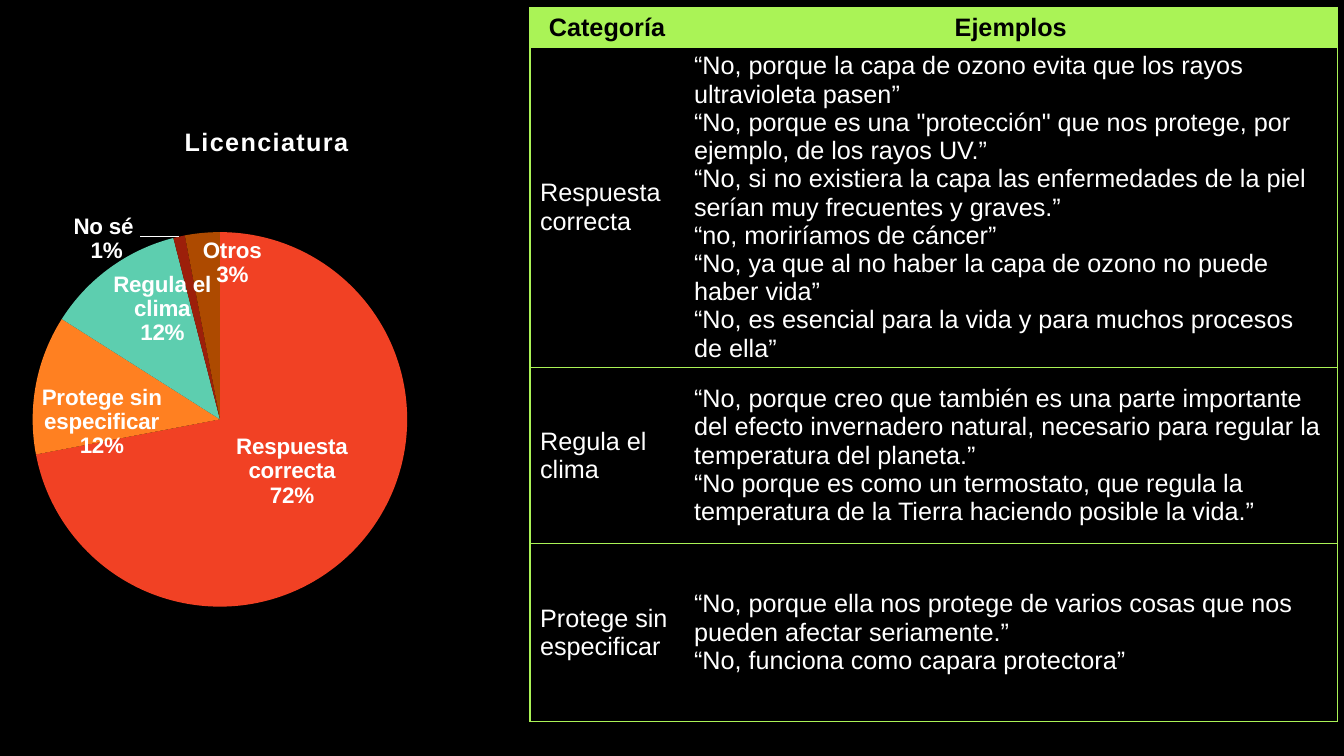
from copy import deepcopy

from lxml import etree
from pptx import Presentation
from pptx import util as u
from pptx.chart.data import CategoryChartData
from pptx.dml.color import RGBColor
from pptx.enum import chart as charts, text
from pptx.oxml import parse_xml
from pptx.oxml.ns import nsdecls, qn

BLACK = RGBColor(0x00, 0x00, 0x00)
WHITE = RGBColor(0xFF, 0xFF, 0xFF)
LIME = RGBColor(0xAA, 0xF3, 0x56)
SLICES = {
    "Respuesta correcta": (72, RGBColor(0xF1, 0x41, 0x24)),
    "Protege sin especificar": (12, RGBColor(0xFF, 0x80, 0x21)),
    "Regula el clima": (12, RGBColor(0x5D, 0xCE, 0xAF)),
    "No sé ": (1, RGBColor(0x9C, 0x1F, 0x0A)),
    "Otros": (3, RGBColor(0xAD, 0x4A, 0x00)),
}
LABEL_SHIFTS = {0: (-0.02, -0.05), 3: (-0.18, -0.05)}
ROWS = [
    (28, "Categoría", ["Ejemplos"]),
    (228.5, "Respuesta correcta", [
        "“No, porque la capa de ozono evita que los rayos ultravioleta pasen”",
        "“No, porque es una \"protección\" que nos protege, por ejemplo, de los rayos UV.”",
        "“No, si no existiera la capa las enfermedades de la piel serían muy frecuentes y graves.”",
        "“no, moriríamos de cáncer”",
        "“No, ya que al no haber la capa de ozono no puede haber vida”",
        "“No, es esencial para la vida y para muchos procesos de ella”",
    ]),
    (125.5, "Regula el clima", [
        "“No, porque creo que también es una parte importante del efecto invernadero natural, "
        "necesario para regular la temperatura del planeta.”",
        "“No porque es como un termostato, que regula la temperatura de la Tierra haciendo "
        "posible la vida.”",
    ]),
    (127.5, "Protege sin especificar", [
        "“No, porque ella nos protege de varios cosas que nos pueden afectar seriamente.”",
        "“No, funciona como capara protectora”",
    ]),
]


def layout_xml(x, y, width=None, height=None, inner=False):
    target = '<c:layoutTarget val="inner"/>' if inner else ""
    modes = '<c:xMode val="edge"/><c:yMode val="edge"/>' if inner else ""
    size = f'<c:w val="{width}"/><c:h val="{height}"/>' if width else ""
    return parse_xml(
        f'<c:layout {nsdecls("c")}><c:manualLayout>{target}{modes}'
        f'<c:x val="{x}"/><c:y val="{y}"/>{size}</c:manualLayout></c:layout>')


class SlideBuilder:
    font_name = "Arial"

    def __init__(self, presentation):
        self.slide = presentation.slides.add_slide(presentation.slide_layouts[6])
        fill = self.slide.background.fill
        fill.solid()
        fill.fore_color.rgb = BLACK

    def style(self, font, size, color, bold):
        font.name = self.font_name
        font.size = u.Pt(size)
        font.bold = bold
        font.color.rgb = color

    def cell(self, cell, lines, header, first_column):
        cell.vertical_anchor = text.MSO_ANCHOR.MIDDLE
        if header:
            cell.fill.solid()
            cell.fill.fore_color.rgb = LIME
        else:
            cell.fill.background()
        for index, line in enumerate(lines):
            frame = cell.text_frame
            paragraph = frame.add_paragraph() if index else frame.paragraphs[0]
            paragraph.alignment = text.PP_ALIGN.CENTER if header else text.PP_ALIGN.LEFT
            run = paragraph.add_run()
            run.text = line
            self.style(run.font, 18, BLACK if header else WHITE, header)
        inner_side = "R" if first_column else "L"
        for index, side in enumerate("LRTB"):
            paint = (f'<a:solidFill><a:srgbClr val="{LIME}"/></a:solidFill>'
                     if side != inner_side else "<a:noFill/>")
            cell._tc.get_or_add_tcPr().insert(index, parse_xml(
                f'<a:ln{side} {nsdecls("a")} w="{u.Pt(1)}">{paint}</a:ln{side}>'))

    def table(self, left, top, widths, rows):
        heights = [row[0] for row in rows]
        table = self.slide.shapes.add_table(
            len(rows), len(widths), u.Pt(left), u.Pt(top),
            u.Pt(sum(widths)), u.Pt(sum(heights))).table
        table.horz_banding = False
        table.first_row = False
        for column, width in zip(table.columns, widths):
            column.width = u.Pt(width)
        for index, (height, category, examples) in enumerate(rows):
            table.rows[index].height = u.Pt(height)
            self.cell(table.cell(index, 0), [category], index == 0, True)
            self.cell(table.cell(index, 1), examples, index == 0, False)

    def pie(self, left, top, width, height, title, slices):
        data = CategoryChartData()
        data.categories = list(slices)
        data.add_series("Series 1", [value for value, _ in slices.values()])
        chart = self.slide.shapes.add_chart(
            charts.XL_CHART_TYPE.PIE, u.Pt(left), u.Pt(top),
            u.Pt(width), u.Pt(height), data).chart
        self.style(chart.font, 10, WHITE, False)
        chart.has_legend = False
        chart.has_title = True
        run = chart.chart_title.text_frame.paragraphs[0].add_run()
        run.text = title
        self.style(run.font, 18, WHITE, True)
        run._r.get_or_add_rPr().set("spc", "100")
        chart.plots[0].vary_by_categories = True
        series = chart.plots[0].series[0]
        for index, (_, color) in enumerate(slices.values()):
            fill = series.points[index].format.fill
            fill.solid()
            fill.fore_color.rgb = color
        self.pie_labels(series)
        space = chart._chartSpace
        area = space.find(qn("c:chart")).find(qn("c:plotArea"))
        for layout in area.findall(qn("c:layout")):
            area.remove(layout)
        area.insert(0, layout_xml(0.106, 0.229, 0.631, 0.677, inner=True))
        space.find(qn("c:chart")).addnext(parse_xml(
            f'<c:spPr {nsdecls("c", "a")}><a:noFill/><a:ln><a:noFill/></a:ln></c:spPr>'))

    def pie_labels(self, series):
        labels = series.data_labels
        self.style(labels.font, 16, WHITE, True)
        labels.position = charts.XL_LABEL_POSITION.INSIDE_END
        labels.show_value = False
        labels.show_category_name = True
        labels.show_percentage = True
        element = labels._element
        separator = etree.Element(qn("c:separator"))
        separator.text = "\n"
        element.find(qn("c:showBubbleSize")).addnext(separator)
        element.append(parse_xml(
            f'<c:leaderLines {nsdecls("c", "a")}><c:spPr><a:ln w="{u.Pt(1)}"><a:solidFill>'
            f'<a:srgbClr val="{WHITE}"/></a:solidFill></a:ln></c:spPr></c:leaderLines>'))
        shared = [child for child in element
                  if child.tag not in (qn("c:showLeaderLines"), qn("c:leaderLines"))]
        for position, (index, shift) in enumerate(LABEL_SHIFTS.items()):
            label = parse_xml(f'<c:dLbl {nsdecls("c")}><c:idx val="{index}"/></c:dLbl>')
            label.append(layout_xml(*shift))
            label.extend(deepcopy(child) for child in shared)
            element.insert(position, label)


def main():
    presentation = Presentation()
    presentation.slide_width = u.Pt(960)
    presentation.slide_height = u.Pt(540)
    builder = SlideBuilder(presentation)
    builder.table(378.6, 5.6, [110, 466.8], ROWS)
    builder.pie(-21.6, 74.9, 424, 396, "Licenciatura", SLICES)
    presentation.save("out.pptx")


if __name__ == "__main__":
    main()
